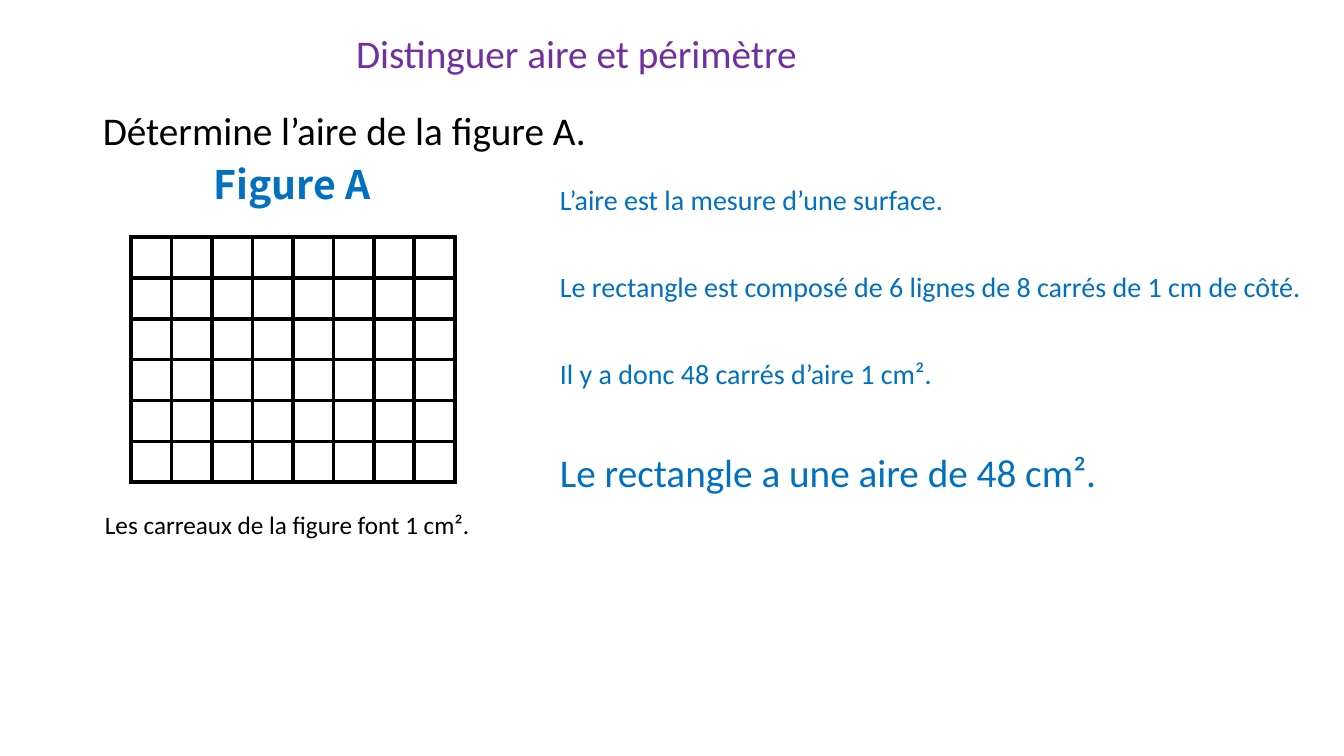
from dataclasses import dataclass

from lxml import etree
from pptx import Presentation
from pptx import util as u
from pptx.dml.color import RGBColor
from pptx.enum import text
from pptx.oxml import ns

EMU_PER_INCH = 914400
PX_PER_INCH = 100.8


@dataclass(frozen=True)
class Theme:
    font: str = "Calibri"
    label_font: str = "Noto Sans CJK JP"
    black: str = "000000"
    blue: str = "0070C0"
    purple: str = "7030A0"
    large: int = 28
    medium: int = 20
    small: int = 18
    grid_line: int = 3


THEME = Theme()


def px(length):
    return u.Emu(round(length * EMU_PER_INCH / PX_PER_INCH))


def apply(target, values):
    for name, value in values.items():
        setattr(target, name, value)


def write(box, words, size, color, font=THEME.font, bold=False, frame=None, para=None):
    """Fill a box with one paragraph; frame and para hold extra format values."""
    apply(box.text_frame, {"vertical_anchor": text.MSO_ANCHOR.TOP, **(frame or {})})
    paragraph = box.text_frame.paragraphs[0]
    apply(paragraph, {"alignment": text.PP_ALIGN.LEFT, **(para or {})})
    span = paragraph.add_run()
    span.text = words
    apply(span.font, {"name": font, "size": u.Pt(size), "bold": bold})
    span.font.color.rgb = RGBColor.from_string(color)


def add_title(page, place, words):
    title = page.shapes.title
    apply(title, dict(zip(("left", "top", "width", "height"), map(px, place))))
    write(title, words, THEME.large, THEME.purple,
          frame={"word_wrap": True, "auto_size": text.MSO_AUTO_SIZE.NONE},
          para={"line_spacing": 1.3, "space_before": u.Pt(10)})


def add_text(page, place, words, size, color, wrap=True, **style):
    box = page.shapes.add_textbox(*map(px, place))
    fit = text.MSO_AUTO_SIZE.SHAPE_TO_FIT_TEXT
    write(box, words, size, color, frame={"word_wrap": wrap, "auto_size": fit}, **style)


def outline(cell):
    properties = cell._tc.get_or_add_tcPr()
    for side in ("a:lnL", "a:lnR", "a:lnT", "a:lnB"):
        line = etree.SubElement(properties, ns.qn(side), w=str(u.Pt(THEME.grid_line)))
        fill = etree.SubElement(line, ns.qn("a:solidFill"))
        etree.SubElement(fill, ns.qn("a:srgbClr"), val=THEME.black)
    cell.fill.background()


def add_square_grid(page, place, rows, columns):
    left, top, width, height = map(px, place)
    table = page.shapes.add_table(rows, columns, left, top, width, height).table
    apply(table, {"first_row": False, "horz_banding": False})
    for cell in table.iter_cells():
        outline(cell)


def main():
    deck = Presentation()
    apply(deck, {"slide_width": px(1344), "slide_height": px(756)})
    page = deck.slides.add_slide(deck.slide_layouts[5])

    add_title(page, (346, 10, 998, 83), "Distinguer aire et périmètre")
    add_square_grid(page, (131, 237, 324, 242), rows=6, columns=8)
    add_text(page, (95, 504, 390, 40), "Les carreaux de la figure font 1 cm².",
             THEME.small, THEME.black, wrap=False)
    add_text(page, (93, 101, 508, 57), "Détermine l’aire de la figure A.",
             THEME.large, THEME.black, wrap=False)

    steps = (
        (686, "L’aire est la mesure d’une surface."),
        (768, "Le rectangle est composé de 6 lignes de 8 carrés de 1 cm de côté."),
        (605, "Il y a donc 48 carrés d’aire 1 cm²."),
    )
    for index, (width, words) in enumerate(steps):
        add_text(page, (550, 178 + 87 * index, width, 44), words, THEME.medium, THEME.blue)
    add_text(page, (550, 443, 563, 57), "Le rectangle a une aire de 48 cm².",
             THEME.large, THEME.blue)
    add_text(page, (173, 155, 238, 57), "Figure A", THEME.large, THEME.blue,
             font=THEME.label_font, bold=True, para={"alignment": text.PP_ALIGN.CENTER})

    deck.save("out.pptx")


if __name__ == "__main__":
    main()
